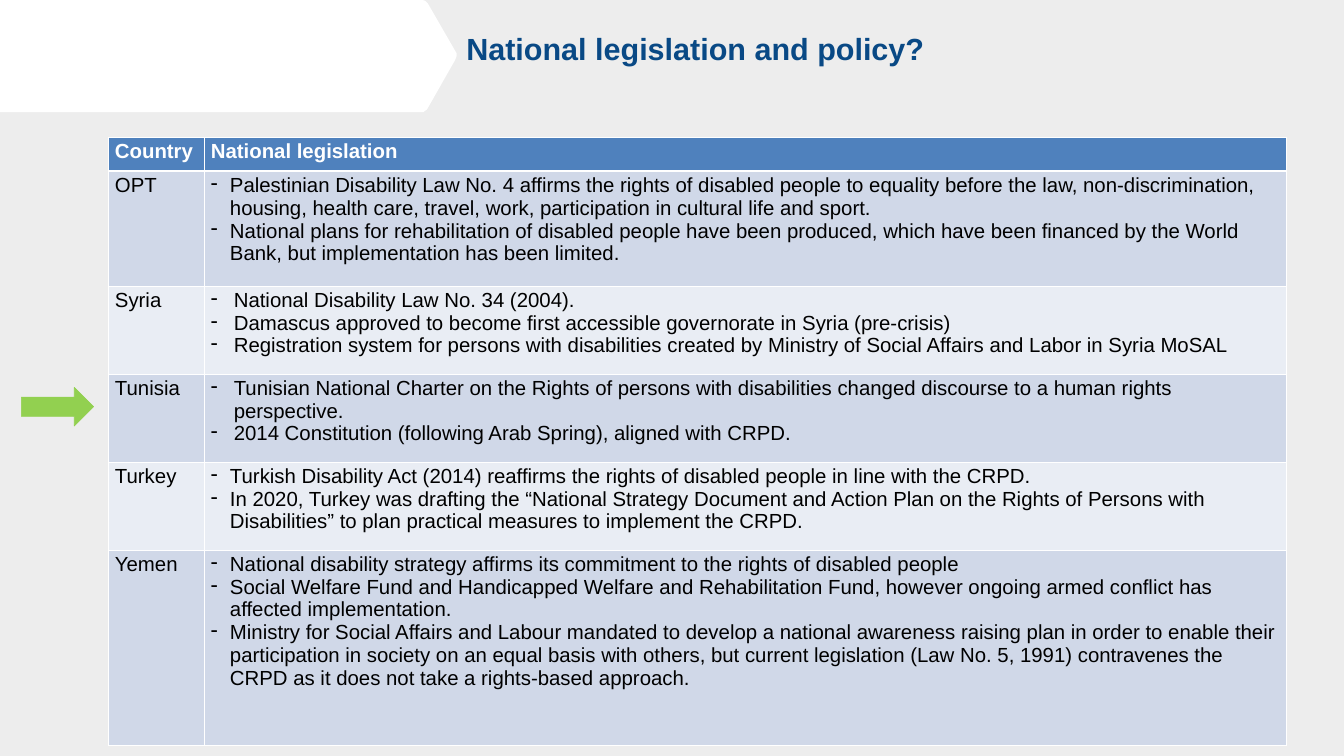
from lxml import etree
from pptx import Presentation
from pptx.dml.color import RGBColor
from pptx.enum import shapes
from pptx.oxml import ns
from pptx.util import Pt

BANDS = ["D0D8E8", "E9EDF4"]
ROW_HEIGHTS = [39.6, 135.4, 103.7, 103.7, 103.7, 230.4]
COLUMN_WIDTHS = [113, 1274]
FLAG_OUTLINE = [
    (498, 0), (0, 0), (0, 131.8), (499, 131.8), (500.4, 131), (503.3, 128.9),
    (536.4, 71.3), (537.8, 65.5), (537.8, 62.6), (504, 4.3), (501.1, 1.4),
]
COUNTRIES = [
    ("OPT", 22.5, [
        "Palestinian Disability Law No. 4 affirms the rights of disabled people to equality before "
        "the law, non-discrimination, housing, health care, travel, work, participation in cultural "
        "life and sport.",
        "National plans for rehabilitation of disabled people have been produced, which have been "
        "financed by the World Bank, but implementation has been limited.",
    ]),
    ("Syria", 27, [
        "National Disability Law No. 34 (2004).",
        "Damascus approved to become first accessible governorate in Syria (pre-crisis)",
        "Registration system for persons with disabilities created by Ministry of Social Affairs "
        "and Labor in Syria MoSAL",
    ]),
    ("Tunisia", 27, [
        "Tunisian National Charter on the Rights of persons with disabilities changed discourse "
        "to a human rights perspective.",
        "2014 Constitution (following Arab Spring), aligned with CRPD.",
    ]),
    ("Turkey", 22.5, [
        "Turkish Disability Act (2014) reaffirms the rights of disabled people in line with the CRPD.",
        "In 2020, Turkey was drafting the “National Strategy Document and Action Plan on the Rights "
        "of Persons with Disabilities” to plan practical measures to implement the CRPD.",
    ]),
    ("Yemen", 22.5, [
        "National disability strategy affirms its commitment to the rights of disabled people",
        "Social Welfare Fund and Handicapped Welfare and Rehabilitation Fund, however ongoing armed "
        "conflict has affected implementation.",
        "Ministry for Social Affairs and Labour mandated to develop a national awareness raising "
        "plan in order to enable their participation in society on an equal basis with others, but "
        "current legislation (Law No. 5, 1991) contravenes the CRPD as it does not take a "
        "rights-based approach.",
    ]),
]


def paint(fill, color):
    """Give a fill one solid hex colour."""
    fill.solid()
    fill.fore_color.rgb = RGBColor.from_string(color)


def style(paragraph, size, color, bold=False):
    """Set the font of a whole paragraph."""
    font = paragraph.font
    font.name, font.size, font.bold = "Arial", Pt(size), bold
    paint(font.fill, color)


def add_dash(paragraph, indent):
    """Hang a paragraph behind a dash."""
    properties = paragraph._p.get_or_add_pPr()
    properties.set("marL", str(Pt(indent)))
    properties.set("indent", str(-Pt(indent)))
    etree.SubElement(properties, ns.qn("a:buChar")).set("char", "-")


def add_borders(cell, top, bottom):
    """Draw white borders around a table cell."""
    properties = cell._tc.get_or_add_tcPr()
    for side, width in (("L", 1), ("R", 1), ("T", top), ("B", bottom)):
        line = etree.SubElement(properties, ns.qn(f"a:ln{side}"), w=str(Pt(width)))
        solid = etree.SubElement(line, ns.qn("a:solidFill"))
        etree.SubElement(solid, ns.qn("a:srgbClr"), val="FFFFFF")


def fill_cell(cell, lines, fill, row, indent=0):
    """Write the lines of a cell, dashed when an indent is given."""
    header = row == 0
    add_borders(cell, 3 if row == 1 else 1, 3 if header else 1)
    paint(cell.fill, fill)
    cell.text_frame.text = "\n".join(lines)
    for paragraph in cell.text_frame.paragraphs:
        if indent:
            add_dash(paragraph, indent)
        style(paragraph, 24, "FFFFFF" if header else "000000", header)


def add_legislation_table(page):
    """Add the table of countries and their laws."""
    frame = page.shapes.add_table(
        len(ROW_HEIGHTS), len(COLUMN_WIDTHS), Pt(128.2), Pt(162),
        Pt(sum(COLUMN_WIDTHS)), Pt(sum(ROW_HEIGHTS)))
    table = frame.table
    for column, width in zip(table.columns, COLUMN_WIDTHS):
        column.width = Pt(width)
    for row, height in zip(table.rows, ROW_HEIGHTS):
        row.height = Pt(height)
    for column, heading in enumerate(["Country", "National legislation"]):
        fill_cell(table.cell(0, column), [heading], "4F81BD", 0)
    for row, (country, indent, laws) in enumerate(COUNTRIES, 1):
        band = BANDS[(row - 1) % 2]
        fill_cell(table.cell(row, 0), [country], band, row)
        fill_cell(table.cell(row, 1), laws, band, row, indent)


def add_flag(page):
    """Add the white pointed flag in the top left corner."""
    builder = page.shapes.build_freeform(*FLAG_OUTLINE[0], scale=Pt(1))
    builder.add_line_segments(FLAG_OUTLINE[1:], close=True)
    flag = builder.convert_to_shape()
    flag.shadow.inherit = False
    paint(flag.fill, "FFFFFF")
    flag.line.fill.background()


def add_title(page, title):
    """Add the slide title."""
    box = page.shapes.add_textbox(Pt(542.2), Pt(31.7), Pt(986.4), Pt(51))
    box.text_frame.word_wrap = True
    box.text_frame.text = title
    style(box.text_frame.paragraphs[0], 36, "094985", True)


def add_marker(page):
    """Add the green arrow that points at a table row."""
    arrow = page.shapes.add_shape(
        shapes.MSO_SHAPE.RIGHT_ARROW, Pt(25.2), Pt(456.5), Pt(85), Pt(45.4))
    arrow.shadow.inherit = False
    paint(arrow.fill, "92D050")
    paint(arrow.line.fill, "92D050")
    arrow.line.width = Pt(0.75)


def main():
    """Build and save the slide."""
    deck = Presentation()
    deck.slide_width, deck.slide_height = Pt(1583.28), Pt(890.64)
    page = deck.slides.add_slide(deck.slide_layouts[6])
    paint(page.background.fill, "EDEDED")
    add_flag(page)
    add_legislation_table(page)
    add_title(page, "National legislation and policy?")
    add_marker(page)
    deck.save("out.pptx")


if __name__ == "__main__":
    main()
